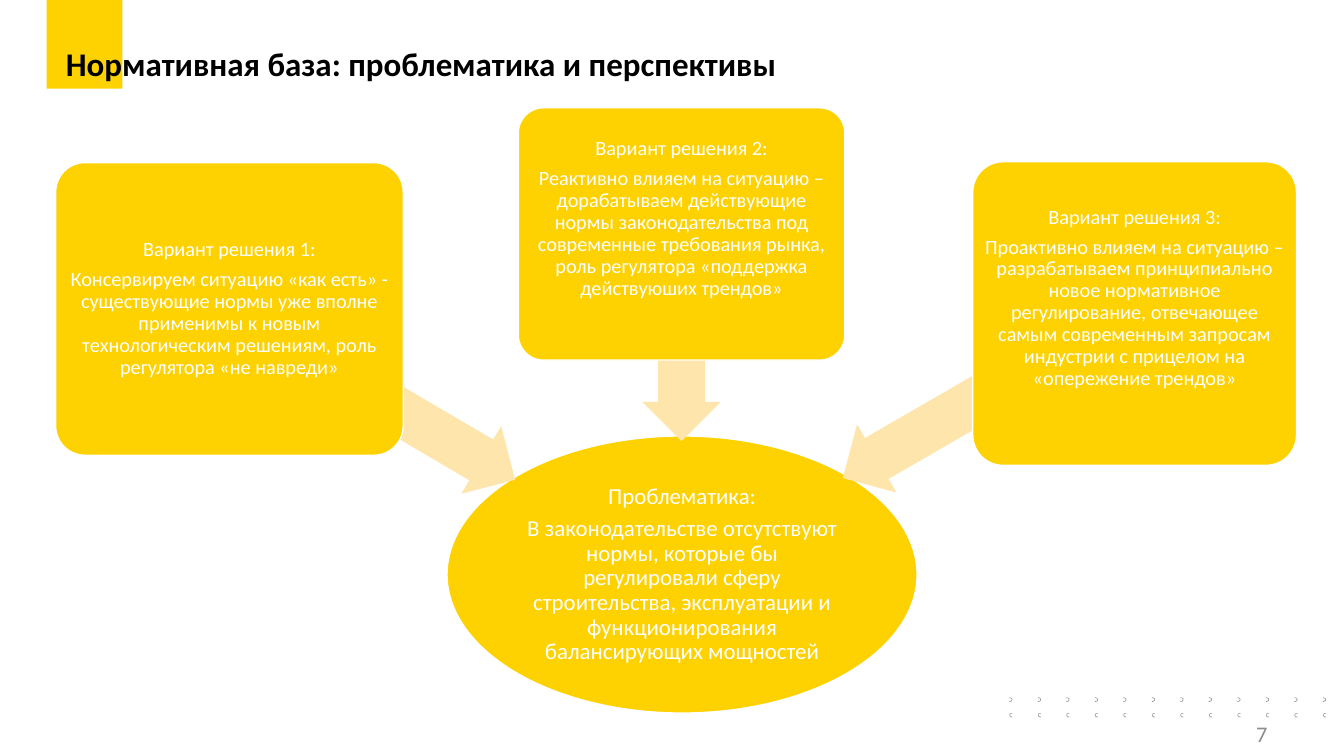
from dataclasses import dataclass

from pptx import Presentation
from pptx.dml.color import RGBColor
from pptx.enum.shapes import MSO_SHAPE
from pptx.enum.text import MSO_ANCHOR, MSO_AUTO_SIZE, PP_ALIGN
from pptx.util import Inches, Pt

RECT, ROUNDED = MSO_SHAPE.RECTANGLE, MSO_SHAPE.ROUNDED_RECTANGLE
ELLIPSE, ARROW = MSO_SHAPE.OVAL, MSO_SHAPE.LEFT_ARROW
TOP, MIDDLE = MSO_ANCHOR.TOP, MSO_ANCHOR.MIDDLE
LEFT, CENTER = PP_ALIGN.LEFT, PP_ALIGN.CENTER

FONT = "Calibri"
YELLOW, PALE, WHITE, BLACK = "FED100", "FEE5AB", "FFFFFF", "000000"
DOT_GREY, NUMBER_GREY = "9B9B9A", "8C8C8C"

DOT_COLUMNS = 12
DOT_LEFT, DOT_RIGHT = 11.04, 14.47
DOT_ROWS = ((7.63, False), (7.8, True))
DOT_WIDTH = 34
# Half-ring outline in thousandths of an inch
HALF_RING = [(10, 0), (23, 4), (31, 12), (34, 23), (31, 34), (23, 43),
             (10, 47), (0, 47), (0, 39), (16, 38), (25, 30), (25, 16),
             (16, 8), (0, 8), (0, 0)]


@dataclass
class Box:
    left: float
    top: float
    width: float
    height: float

    def emu(self) -> tuple:
        return (Inches(self.left), Inches(self.top),
                Inches(self.width), Inches(self.height))


@dataclass
class Option:
    box: Box
    arrow: Box
    rotation: float
    heading: str
    text: str
    bottom_inset: float = 0.03


OPTIONS = [
    Option(Box(0.61, 1.78, 3.8, 3.2), Box(2.44, 3.95, 3.43, 0.86), 210.4,
           "Вариант решения 1:",
           "Консервируем ситуацию «как есть» - существующие нормы уже вполне "
           "применимы к новым технологическим решениям, роль регулятора "
           "«не навреди»"),
    Option(Box(5.67, 1.18, 3.57, 2.76), Box(6.41, 3.35, 2.09, 0.86), 270,
           "Вариант решения 2:",
           "Реактивно влияем на ситуацию – дорабатываем действующие нормы "
           "законодательства под современные требования рынка, роль "
           "регулятора «поддержка действуюших трендов»", 0.36),
    Option(Box(10.64, 1.77, 3.54, 3.32), Box(8.99, 3.95, 3.4, 0.86), 330,
           "Вариант решения 3:",
           "Проактивно влияем на ситуацию – разрабатываем принципиально "
           "новое нормативное регулирование, отвечающее самым современным "
           "запросам индустрии с прицелом на «опережение трендов»", 0.36),
]


def rgb(value: str) -> RGBColor:
    return RGBColor.from_string(value)


def write(shape, *lines: str, size: float, color: str = WHITE,
          bold: bool = False, align=CENTER, anchor=MIDDLE,
          spacing: float = 0.9, wrap: bool = True,
          insets: tuple = (0.1, 0.05, 0.1, 0.05)) -> None:
    """Fill a shape with paragraphs; insets are left, top, right, bottom."""
    tf = shape.text_frame
    tf.word_wrap = wrap
    tf.auto_size = MSO_AUTO_SIZE.NONE
    tf.vertical_anchor = anchor
    (tf.margin_left, tf.margin_top,
     tf.margin_right, tf.margin_bottom) = map(Inches, insets)
    for i, line in enumerate(lines):
        p = tf.add_paragraph() if i else tf.paragraphs[0]
        p.alignment = align
        p.line_spacing = spacing
        p.space_before = Pt(6 if i else 0)
        r = p.add_run()
        r.text = line
        r.font.name = FONT
        r.font.size = Pt(size)
        r.font.bold = bold
        r.font.color.rgb = rgb(color)


def paint(sp, fill: str, line: str | None = None) -> None:
    sp.shadow.inherit = False
    sp.fill.solid()
    sp.fill.fore_color.rgb = rgb(fill)
    if line:
        sp.line.color.rgb = rgb(line)
        sp.line.width = Pt(1)
    else:
        sp.line.fill.background()


def add_shape(s, kind, box: Box, fill: str, line: str | None = None):
    sp = s.shapes.add_shape(kind, *box.emu())
    paint(sp, fill, line)
    return sp


def add_dots(s) -> None:
    pitch = (DOT_RIGHT - DOT_LEFT) / (DOT_COLUMNS - 1)
    for top, mirrored in DOT_ROWS:
        points = [(DOT_WIDTH - x if mirrored else x, y) for x, y in HALF_RING]
        for column in range(DOT_COLUMNS):
            builder = s.shapes.build_freeform(*points[0], scale=Inches(1) / 1000)
            builder.add_line_segments(points[1:], close=True)
            left = DOT_LEFT + column * pitch
            paint(builder.convert_to_shape(Inches(left), Inches(top)), DOT_GREY)


def add_title(s, text: str) -> None:
    """Format the title and bring it in front of the shapes drawn so far."""
    title = s.shapes.title
    title.left, title.top, title.width, title.height = Box(
        0.62, 0.48, 12.09, 0.45).emu()
    write(title, text, size=26, color=BLACK, bold=True, align=LEFT, anchor=TOP)
    s.shapes._spTree.append(title._element)


def add_option(s, option: Option) -> None:
    arrow = add_shape(s, ARROW, option.arrow, PALE)
    arrow.adjustments[0] = 0.6
    arrow.adjustments[1] = 0.5
    arrow.rotation = option.rotation
    sp = add_shape(s, ROUNDED, option.box, YELLOW, WHITE)
    sp.adjustments[0] = 0.1
    write(sp, option.heading, option.text, size=16,
          insets=(0.03, 0.03, 0.03, option.bottom_inset))


def main() -> None:
    prs = Presentation()
    prs.slide_width, prs.slide_height = Inches(14.7), Inches(8.27)
    s = prs.slides.add_slide(prs.slide_layouts[5])

    number = s.shapes.add_textbox(*Box(13.64, 7.83, 0.49, 0.4).emu())
    write(number, "7", size=17.6, color=NUMBER_GREY, align=LEFT, anchor=TOP,
          spacing=1.0, wrap=False)
    add_shape(s, RECT, Box(0.51, 0, 0.83, 0.97), YELLOW)
    add_dots(s)
    add_title(s, "Нормативная база: проблематика и перспективы")

    problem = add_shape(s, ELLIPSE, Box(4.89, 4.77, 5.14, 3.03), YELLOW, WHITE)
    write(problem, "Проблематика:",
          "В законодательстве отсутствуют нормы, которые бы регулировали "
          "сферу строительства, эксплуатации и функционирования "
          "балансирующих мощностей", size=18, insets=(0.01,) * 4)
    for option in OPTIONS:
        add_option(s, option)
    prs.save("out.pptx")


if __name__ == "__main__":
    main()
